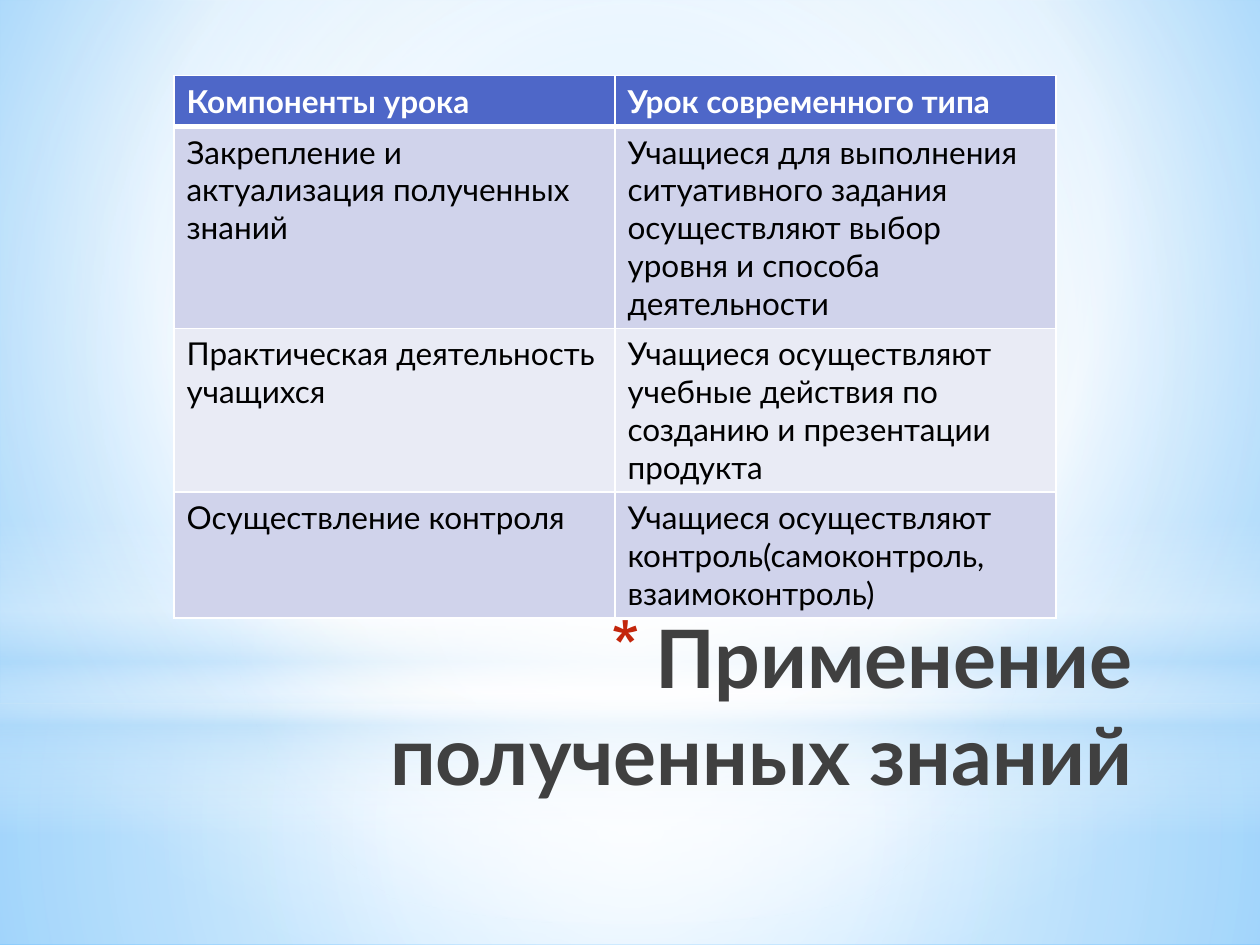
"""Build the slide on applying acquired knowledge: a lesson table over a soft blue backdrop."""
from dataclasses import dataclass

from lxml.etree import SubElement
from pptx import Presentation
from pptx.dml.color import RGBColor
from pptx.enum.shapes import MSO_SHAPE
from pptx.enum.text import MSO_ANCHOR, PP_ALIGN
from pptx.oxml.ns import qn
from pptx.util import Pt


@dataclass(frozen=True)
class Theme:
    font: str = "Lato"
    title_size: int = 46
    bullet_percent: int = 92
    table_size: int = 18
    title: str = "404040"
    bullet: str = "C3260C"
    white: str = "FFFFFF"
    haze: str = "B4DCFA"
    sky_light: str = "9ED5FF"
    sky_deep: str = "5BB9FF"
    header: str = "4E67C8"
    body: str = "000000"
    bands: tuple = ("D0D3EB", "E9EBF5")


THEME = Theme()
CENTER = (50, 50, 50, 50)
LESSON = [
    ("Компоненты урока", "Урок современного типа"),
    ("Закрепление и актуализация полученных знаний",
     "Учащиеся для выполнения ситуативного задания осуществляют выбор уровня и способа деятельности"),
    ("Практическая деятельность учащихся",
     "Учащиеся осуществляют учебные действия по созданию и презентации продукта"),
    ("Осуществление контроля",
     "Учащиеся осуществляют контроль(самоконтроль, взаимоконтроль)"),
]
ROW_HEIGHTS = (29.2, 115.2, 93.6, 72)


def add_color(parent, color, opacity=100):
    rgb = SubElement(parent, qn("a:srgbClr"), val=color)
    if opacity < 100:
        SubElement(rgb, qn("a:alpha"), val=str(opacity * 1000))


def apply_gradient(fill, properties, stops, focus=None):
    fill.solid()
    placeholder = properties.find(qn("a:solidFill"))
    gradient = SubElement(properties, qn("a:gradFill"), rotWithShape="1")
    properties.replace(placeholder, gradient)
    stop_list = SubElement(gradient, qn("a:gsLst"))
    for position, color, opacity in stops:
        stop = SubElement(stop_list, qn("a:gs"), pos=str(position * 1000))
        add_color(stop, color, opacity)
    if focus:
        circle = SubElement(gradient, qn("a:path"), path="circle")
        edges = {side: str(value * 1000) for side, value in zip("ltrb", focus)}
        SubElement(circle, qn("a:fillToRect"), **edges)
    else:
        SubElement(gradient, qn("a:lin"), ang=str(90 * 60000), scaled="0")


def add_glow(slide, kind, top, height, stops, focus=None):
    glow = slide.shapes.add_shape(kind, Pt(0), Pt(top), Pt(720), Pt(height))
    glow.shadow.inherit = False
    apply_gradient(glow.fill, glow.element.spPr, stops, focus)
    glow.line.fill.background()


def add_backdrop(slide):
    white, haze = THEME.white, THEME.haze
    background = slide.background.fill
    background.solid()
    apply_gradient(background, slide.element.find(".//" + qn("p:bgPr")),
                   [(0, THEME.sky_light, 100), (60, white, 100), (100, THEME.sky_deep, 100)],
                   (20, 10, 20, 60))
    add_glow(slide, MSO_SHAPE.RECTANGLE, 402, 138,
             [(0, white, 91), (37, white, 76), (100, haze, 79)], CENTER)
    add_glow(slide, MSO_SHAPE.RECTANGLE, 0, 402,
             [(0, white, 89), (48, white, 62), (100, haze, 79)], CENTER)
    add_glow(slide, MSO_SHAPE.RECTANGLE, 297, 180,
             [(0, white, 0), (29, white, 30), (45, haze, 40),
              (55, white, 26), (65, haze, 60), (100, white, 0)])
    add_glow(slide, MSO_SHAPE.OVAL, 126, 402,
             [(0, white, 100), (56, white, 0)], CENTER)


def format_text(paragraph, size, color, bold):
    for run in paragraph.runs:
        run.font.name = THEME.font
        run.font.size = Pt(size)
        run.font.bold = bold
        run.font.color.rgb = RGBColor.from_string(color)


def add_title(slide, wording):
    title = slide.shapes.add_textbox(Pt(141), Pt(344), Pt(513), Pt(90)).text_frame
    title.word_wrap = True
    title.vertical_anchor = MSO_ANCHOR.TOP
    title.text = wording
    heading = title.paragraphs[0]
    heading.alignment = PP_ALIGN.RIGHT
    properties = heading._p.get_or_add_pPr()
    properties.set("marL", str(Pt(25)))
    properties.set("indent", str(Pt(-25)))
    add_color(SubElement(properties, qn("a:buClr")), THEME.bullet)
    SubElement(properties, qn("a:buSzPct"), val=str(THEME.bullet_percent * 1000))
    SubElement(properties, qn("a:buChar"), char="*")
    format_text(heading, THEME.title_size, THEME.title, True)


def add_borders(cell, top, bottom):
    properties = cell._tc.get_or_add_tcPr()
    for index, (side, width) in enumerate(zip("LRTB", (1, 1, top, bottom))):
        border = SubElement(properties, qn("a:ln" + side), w=str(Pt(width)))
        properties.insert(index, border)
        add_color(SubElement(border, qn("a:solidFill")), THEME.white)


def add_lesson_table(slide):
    lesson = slide.shapes.add_table(len(LESSON), 2, Pt(99.4), Pt(43.2),
                                    Pt(504), Pt(sum(ROW_HEIGHTS))).table
    lesson.horz_banding = False
    for index, (wordings, height) in enumerate(zip(LESSON, ROW_HEIGHTS)):
        is_header = index == 0
        lesson.rows[index].height = Pt(height)
        band = THEME.header if is_header else THEME.bands[(index - 1) % 2]
        for column, wording in enumerate(wordings):
            cell = lesson.cell(index, column)
            cell.text_frame.text = wording
            format_text(cell.text_frame.paragraphs[0], THEME.table_size,
                        THEME.white if is_header else THEME.body, is_header)
            cell.fill.solid()
            cell.fill.fore_color.rgb = RGBColor.from_string(band)
            add_borders(cell, 3 if index == 1 else 1, 3 if is_header else 1)


def main():
    presentation = Presentation()
    presentation.slide_width, presentation.slide_height = Pt(720), Pt(540)
    slide = presentation.slides.add_slide(presentation.slide_layouts[6])
    add_backdrop(slide)
    add_lesson_table(slide)
    add_title(slide, "Применение полученных знаний")
    presentation.save("out.pptx")


if __name__ == "__main__":
    main()
